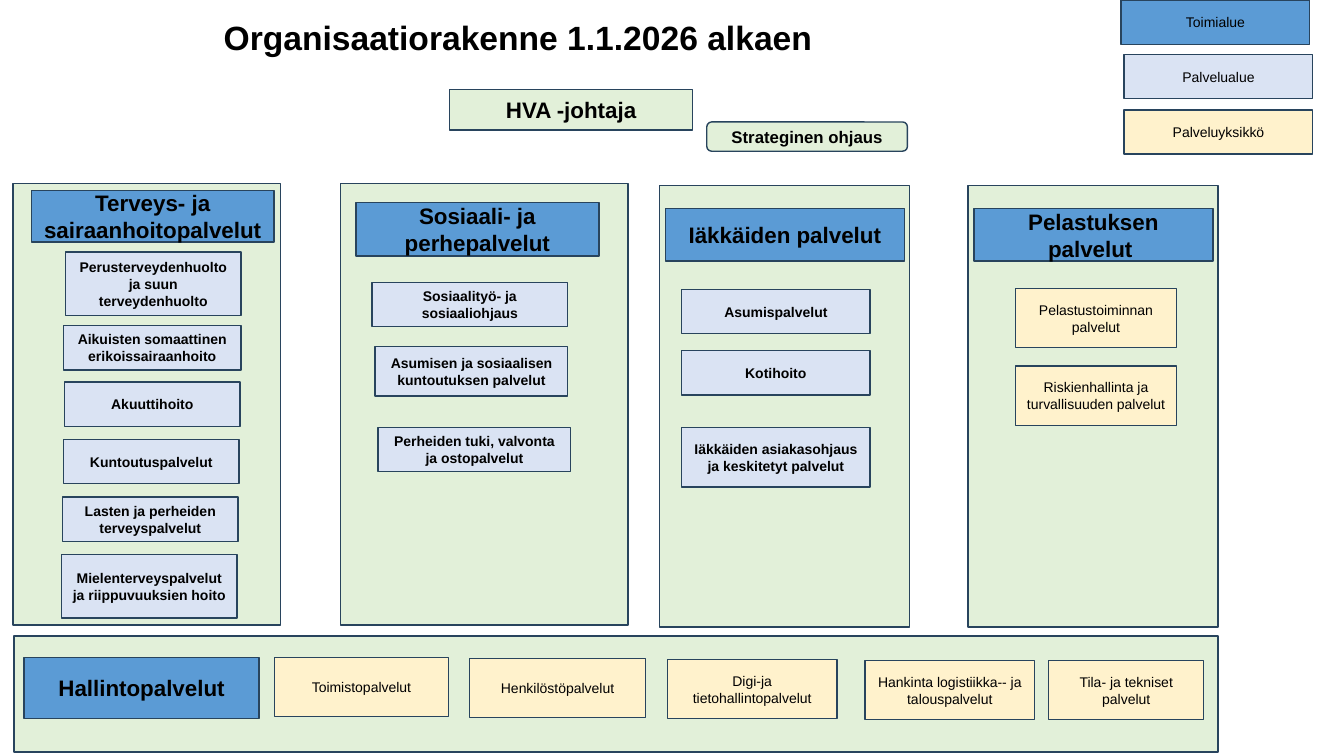
from dataclasses import dataclass

import pptx
import pptx.dml.color
import pptx.enum.shapes
import pptx.enum.text
import pptx.util

RECTANGLE = pptx.enum.shapes.MSO_SHAPE.RECTANGLE
ROUNDED = pptx.enum.shapes.MSO_SHAPE.ROUNDED_RECTANGLE
CENTER = pptx.enum.text.PP_ALIGN.CENTER
LEFT = pptx.enum.text.PP_ALIGN.LEFT


@dataclass(frozen=True)
class Theme:
    font: str = "Arial"
    text: str = "000000"
    outline: str = "28445D"
    green: str = "E2F0D9"
    blue: str = "5B9BD5"
    pale_blue: str = "DAE3F3"
    yellow: str = "FFF2CC"
    title_size: int = 24
    heading_size: int = 16
    guidance_size: int = 12
    label_size: int = 10
    line_width: int = 1


class OrganisationSlide:
    """Places elements on a grid with ten columns and ten rows to the inch."""

    def __init__(self, presentation, theme):
        self.theme = theme
        self.slide = presentation.slides.add_slide(presentation.slide_layouts[6])

    def place(self, *cells):
        return [pptx.util.Inches(cell / 10) for cell in cells]

    def set_text(self, shape, text, size, bold, alignment=CENTER, spacing=None):
        frame = shape.text_frame
        frame.word_wrap = True
        frame.vertical_anchor = pptx.enum.text.MSO_ANCHOR.MIDDLE
        for index, line in enumerate(text.split("\n")):
            paragraph = frame.add_paragraph() if index else frame.paragraphs[0]
            paragraph.alignment = alignment
            paragraph.line_spacing = spacing
            run = paragraph.add_run()
            run.text = line
            run.font.name = self.theme.font
            run.font.size = pptx.util.Pt(size)
            run.font.bold = bold
            run.font.color.rgb = pptx.dml.color.RGBColor.from_string(self.theme.text)

    def title(self, text, *cells):
        shape = self.slide.shapes.add_textbox(*self.place(*cells))
        self.set_text(shape, text, self.theme.title_size, True, LEFT, 0.9)

    def panel(self, fill, *cells, outline=RECTANGLE):
        shape = self.slide.shapes.add_shape(outline, *self.place(*cells))
        shape.shadow.inherit = False
        shape.fill.solid()
        shape.fill.fore_color.rgb = pptx.dml.color.RGBColor.from_string(fill)
        shape.line.color.rgb = pptx.dml.color.RGBColor.from_string(self.theme.outline)
        shape.line.width = pptx.util.Pt(self.theme.line_width)
        return shape

    def heading(self, text, *cells, fill=None):
        shape = self.panel(fill or self.theme.blue, *cells)
        self.set_text(shape, text, self.theme.heading_size, True)

    def guidance(self, text, *cells):
        shape = self.panel(self.theme.green, *cells, outline=ROUNDED)
        self.set_text(shape, text, self.theme.guidance_size, True)

    def label(self, text, fill, *cells, bold=False):
        self.set_text(self.panel(fill, *cells), text, self.theme.label_size, bold)

    def service_area(self, text, *cells):
        self.label(text, self.theme.pale_blue, *cells, bold=True)

    def service_unit(self, text, *cells):
        self.label(text, self.theme.yellow, *cells)


# Each domain: panel, heading and its cells (left, top, width, height)
DOMAINS = [
    ((1.3, 18.2, 26.5, 43.8), "Terveys- ja sairaanhoitopalvelut", (3.1, 18.9, 24.1, 5.1)),
    ((33.8, 18.2, 28.5, 43.8), "Sosiaali- ja perhepalvelut", (35.3, 20.1, 24.1, 5.3)),
    ((65.4, 18.4, 24.8, 43.8), "Iäkkäiden palvelut", (66, 20.7, 23.7, 5.2)),
    ((96, 18.4, 24.8, 43.8), "Pelastuksen palvelut ", (96.6, 20.7, 23.7, 5.2)),
    ((1.4, 63.1, 119.4, 11.5), "Hallintopalvelut", (2.4, 65.2, 23.3, 6.1)),
]

SERVICE_AREAS = [
    ("Perusterveydenhuolto ja suun terveydenhuolto", 6.5, 25, 17.4, 6.3),
    ("Aikuisten somaattinen erikoissairaanhoito", 6.3, 32.3, 17.6, 4.4),
    ("Akuuttihoito", 6.4, 37.9, 17.4, 4.4),
    ("Kuntoutuspalvelut", 6.3, 43.6, 17.4, 4.4),
    ("Lasten ja perheiden terveyspalvelut", 6.2, 49.3, 17.4, 4.4),
    ("Mielenterveyspalvelut ja riippuvuuksien hoito", 6.1, 55, 17.4, 6.3),
    ("Sosiaalityö- ja sosiaaliohjaus", 36.9, 28, 19.4, 4.4),
    ("Asumisen ja sosiaalisen kuntoutuksen palvelut", 37.2, 34.4, 19.1, 4.9),
    ("Perheiden tuki, valvonta ja ostopalvelut", 37.5, 42.4, 19.1, 4.4),
    ("Asumispalvelut", 67.6, 28.7, 18.7, 4.4),
    ("Kotihoito", 67.6, 34.8, 18.7, 4.4),
    ("Iäkkäiden asiakasohjaus ja keskitetyt palvelut", 67.6, 42.4, 18.7, 5.9),
]

UNIT_HEIGHT = 5.9
SERVICE_UNITS = [
    ("Pelastustoiminnan palvelut", 100.7, 28.6, 16),
    ("Riskienhallinta ja turvallisuuden palvelut", 100.7, 36.3, 16),
    ("Toimistopalvelut", 27.2, 65.2, 17.3),
    ("Henkilöstöpalvelut", 46.6, 65.3, 17.4),
    ("Digi-ja tietohallintopalvelut", 66.2, 65.4, 16.8),
    ("Hankinta logistiikka-- ja talouspalvelut", 85.8, 65.5, 16.8),
    ("Tila- ja tekniset\npalvelut", 104, 65.5, 15.4),
]


def main():
    presentation = pptx.Presentation()
    presentation.slide_width = pptx.util.Inches(13.33)
    presentation.slide_height = pptx.util.Inches(7.5)
    theme = Theme()
    chart = OrganisationSlide(presentation, theme)

    chart.title("Organisaatiorakenne 1.1.2026 alkaen", 21.2, 0.8, 85.5, 6.2)
    chart.heading("HVA -johtaja", 44.6, 8.9, 24.1, 4, fill=theme.green)
    chart.guidance("Strateginen ohjaus", 70.1, 12.1, 19.9, 2.9)

    for panel, name, heading in DOMAINS:
        chart.panel(theme.green, *panel)
        chart.heading(name, *heading)
    for area in SERVICE_AREAS:
        chart.service_area(*area)
    for unit in SERVICE_UNITS:
        chart.service_unit(*unit, UNIT_HEIGHT)

    legend = [
        ("Toimialue", theme.blue, 111.2, 0),
        ("Palvelualue", theme.pale_blue, 111.5, 5.4),
        ("Palveluyksikkö", theme.yellow, 111.5, 10.9),
    ]
    for entry in legend:
        chart.label(*entry, 18.7, 4.4)

    presentation.save("out.pptx")


if __name__ == "__main__":
    main()
